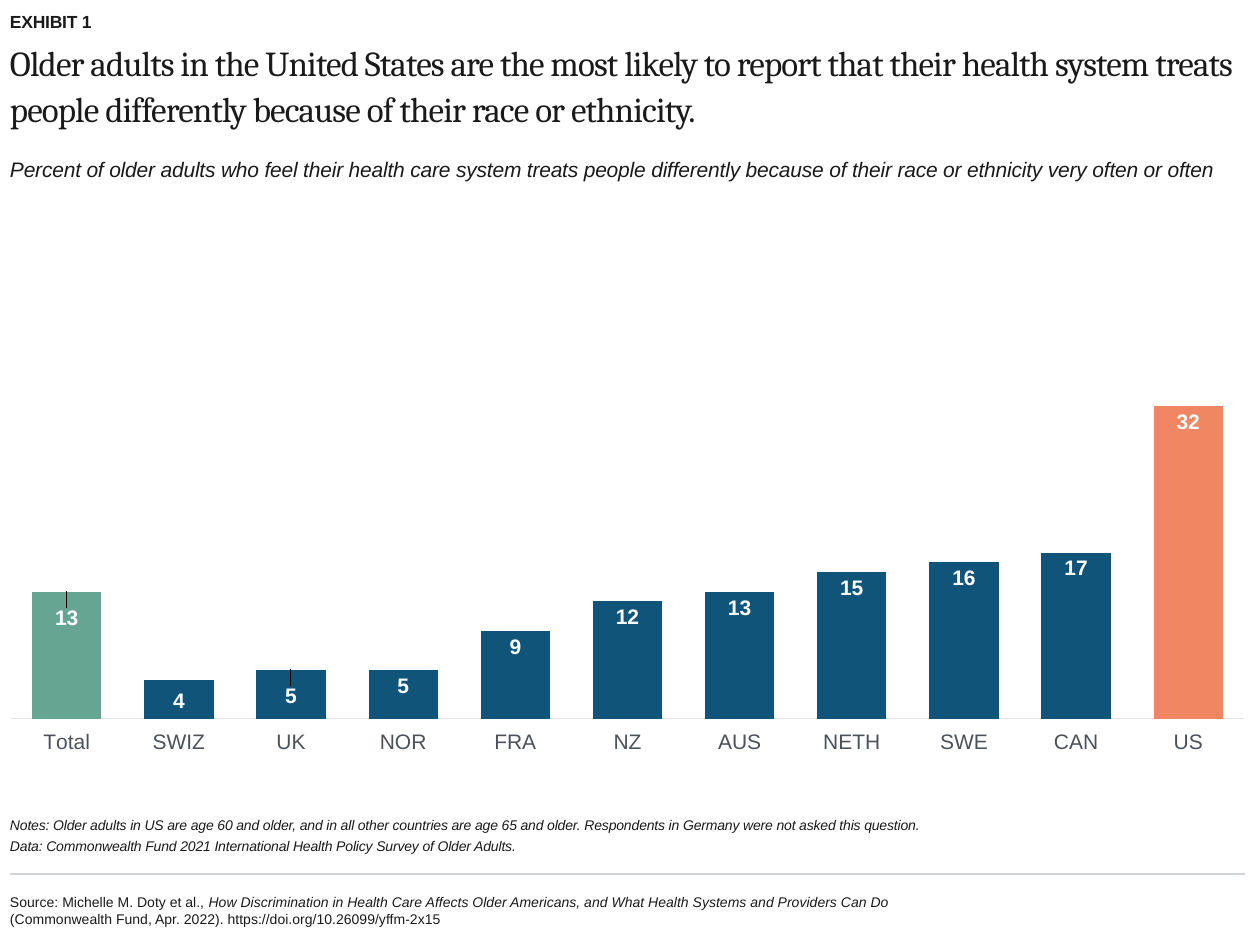
from lxml.etree import SubElement
from pptx import Presentation
from pptx.chart.data import CategoryChartData
from pptx.dml.color import RGBColor
from pptx.enum.chart import XL_CHART_TYPE, XL_LABEL_POSITION, XL_TICK_LABEL_POSITION, XL_TICK_MARK
from pptx.enum.shapes import MSO_CONNECTOR
from pptx.enum.text import MSO_ANCHOR
from pptx.oxml import parse_xml
from pptx.oxml.ns import nsdecls, qn
from pptx.util import Emu, Pt

LEFT, WIDTH = 10, 1235
INK, GREY, NAVY, GREEN, CORAL = "1A1A1A", "4C515A", "115479", "65A591", "F08662"
RATES = {"Total": 13, "SWIZ": 4, "UK": 5, "NOR": 5, "FRA": 9, "NZ": 12,
         "AUS": 13, "NETH": 15, "SWE": 16, "CAN": 17, "US": 32}
HIGHLIGHTS = {"Total": GREEN, "US": CORAL}
LABEL_SHIFTS = {"Total": (0, 0.02), "SWIZ": (0, 0.01), "UK": (0, 0.02)}


def px(length):
    """Turn pixels into EMU."""
    return Emu(round(length * 914400 / 126))


def color(value):
    """Turn a hex string into a colour."""
    return RGBColor.from_string(value)


def manual_layout(**values):
    """Build a manual chart layout from named settings."""
    settings = "".join(f'<c:{name} val="{value}"/>' for name, value in values.items())
    return parse_xml(f'<c:layout {nsdecls("c")}><c:manualLayout>{settings}</c:manualLayout></c:layout>')


class ExhibitBuilder:
    """Holds the text style and the current slide."""

    def __init__(self, page, font="Arial", ink=INK):
        """Keep the page and its default style."""
        self.page, self.font, self.ink = page, font, ink

    def style(self, font, size, ink, bold=False, italic=False, name=None):
        """Apply one text style to a font."""
        font.name, font.size = name or self.font, Pt(size)
        font.bold, font.italic = bold, italic
        font.color.rgb = color(ink)

    def text(self, top, height, paragraphs, size, width=WIDTH, anchor=MSO_ANCHOR.TOP,
             bold=False, italic=False, name=None, tracking=0, line_spacing=None):
        """Add a text box; each paragraph is a list of spans, every second one italic."""
        box = self.page.shapes.add_textbox(px(LEFT), px(top), px(width), px(height))
        frame = box.text_frame
        frame.word_wrap, frame.vertical_anchor = True, anchor
        frame.margin_left = frame.margin_right = frame.margin_top = frame.margin_bottom = 0
        for row, spans in enumerate(paragraphs):
            paragraph = frame.add_paragraph() if row else frame.paragraphs[0]
            if row:
                paragraph.space_before = Pt(2)
            if line_spacing:
                paragraph.line_spacing = line_spacing
            for index, words in enumerate(spans):
                span = paragraph.add_run()
                span.text = words
                self.style(span.font, size, self.ink, bold, italic or index % 2 == 1, name)
                if tracking:
                    span.font._element.set("spc", str(tracking))

    def rule(self, top, ink):
        """Add a full-width horizontal rule."""
        line = self.page.shapes.add_connector(
            MSO_CONNECTOR.STRAIGHT, px(LEFT + WIDTH), px(top), px(LEFT), px(top))
        line.line.color.rgb, line.line.width = color(ink), Pt(0.75)
        SubElement(line._element.spPr, qn("a:effectLst"))

    def columns(self, top, height, rates):
        """Add the column chart."""
        data = CategoryChartData()
        data.categories = list(rates)
        data.add_series("Series 1", list(rates.values()))
        chart = self.page.shapes.add_chart(
            XL_CHART_TYPE.COLUMN_CLUSTERED, px(LEFT), px(top), px(WIDTH), px(height), data).chart
        chart.has_legend = chart.has_title = False
        self.style(chart.font, 10, GREY, name="Calibri")
        self.axes(chart)
        plot = chart.plots[0]
        plot.gap_width, plot.overlap, plot.vary_by_categories = 62, -35, False
        area = chart._chartSpace.chart.plotArea
        for old in area.findall(qn("c:layout")):
            area.remove(old)
        area.insert(0, manual_layout(layoutTarget="inner", xMode="edge", yMode="edge",
                                     x=0, y=0.02, w=1, h=0.9))
        series = plot.series[0]
        series.format.fill.solid()
        series.format.fill.fore_color.rgb = color(NAVY)
        self.label(series.data_labels)
        series.data_labels.show_value = True
        for index, country in enumerate(rates):
            if country in HIGHLIGHTS:
                fill = series.points[index].format.fill
                fill.solid()
                fill.fore_color.rgb = color(HIGHLIGHTS[country])
            if country in LABEL_SHIFTS:
                across, down = LABEL_SHIFTS[country]
                self.label(series.points[index].data_label)
                entry = series.data_labels._element.findall(qn("c:dLbl"))[-1]
                entry.insert(1, manual_layout(x=across, y=down))

    def axes(self, chart):
        """Style the country axis and hide the value axis."""
        countries, values = chart.category_axis, chart.value_axis
        countries.major_tick_mark = countries.minor_tick_mark = XL_TICK_MARK.NONE
        countries.tick_label_position = XL_TICK_LABEL_POSITION.LOW
        self.style(countries.tick_labels.font, 12, GREY)
        countries.format.line.color.rgb = color("E3E5E7")
        countries.format.line.width = Pt(0.75)
        values.minimum_scale, values.maximum_scale = 0, 50
        values.has_major_gridlines = values.visible = False

    def label(self, label):
        """Style a value label inside the top of its column."""
        self.style(label.font, 12, "FFFFFF", bold=True)
        label.position = XL_LABEL_POSITION.INSIDE_END


def main():
    """Build and save the exhibit."""
    deck = Presentation()
    deck.slide_width, deck.slide_height = px(1260), px(945)
    exhibit = ExhibitBuilder(deck.slides.add_slide(deck.slide_layouts[6]))
    exhibit.text(881, 58, [[
        "Source: Michelle M. Doty et al., ",
        "How Discrimination in Health Care Affects Older Americans, and What Health Systems and Providers Can Do",
        " (Commonwealth Fund, Apr. 2022). https://doi.org/10.26099/yffm-2x15",
    ]], 8, width=983, anchor=MSO_ANCHOR.MIDDLE)
    exhibit.rule(874, "D0D3D8")
    exhibit.text(791, 63, [
        ["Notes: Older adults in US are age 60 and older, and in all other countries are age 65 and older. "
         "Respondents in Germany were not asked this question."],
        ["Data: Commonwealth Fund 2021 International Health Policy Survey of Older Adults."],
    ], 8, anchor=MSO_ANCHOR.BOTTOM, italic=True, tracking=-10)
    exhibit.columns(220, 542, RATES)
    exhibit.text(37, 105, [[
        "Older adults in the United States are the most likely to report that their health system treats "
        "people differently because of their race or ethnicity."
    ]], 20, name="Cambria", tracking=-50, line_spacing=1.1)
    exhibit.text(6, 26, [["EXHIBIT 1"]], 10, anchor=MSO_ANCHOR.BOTTOM, bold=True, tracking=-10)
    exhibit.text(157, 32, [[
        "Percent of older adults who feel their health care system treats people differently "
        "because of their race or ethnicity very often or often"
    ]], 12, italic=True, tracking=-10)
    deck.save("out.pptx")


if __name__ == "__main__":
    main()
